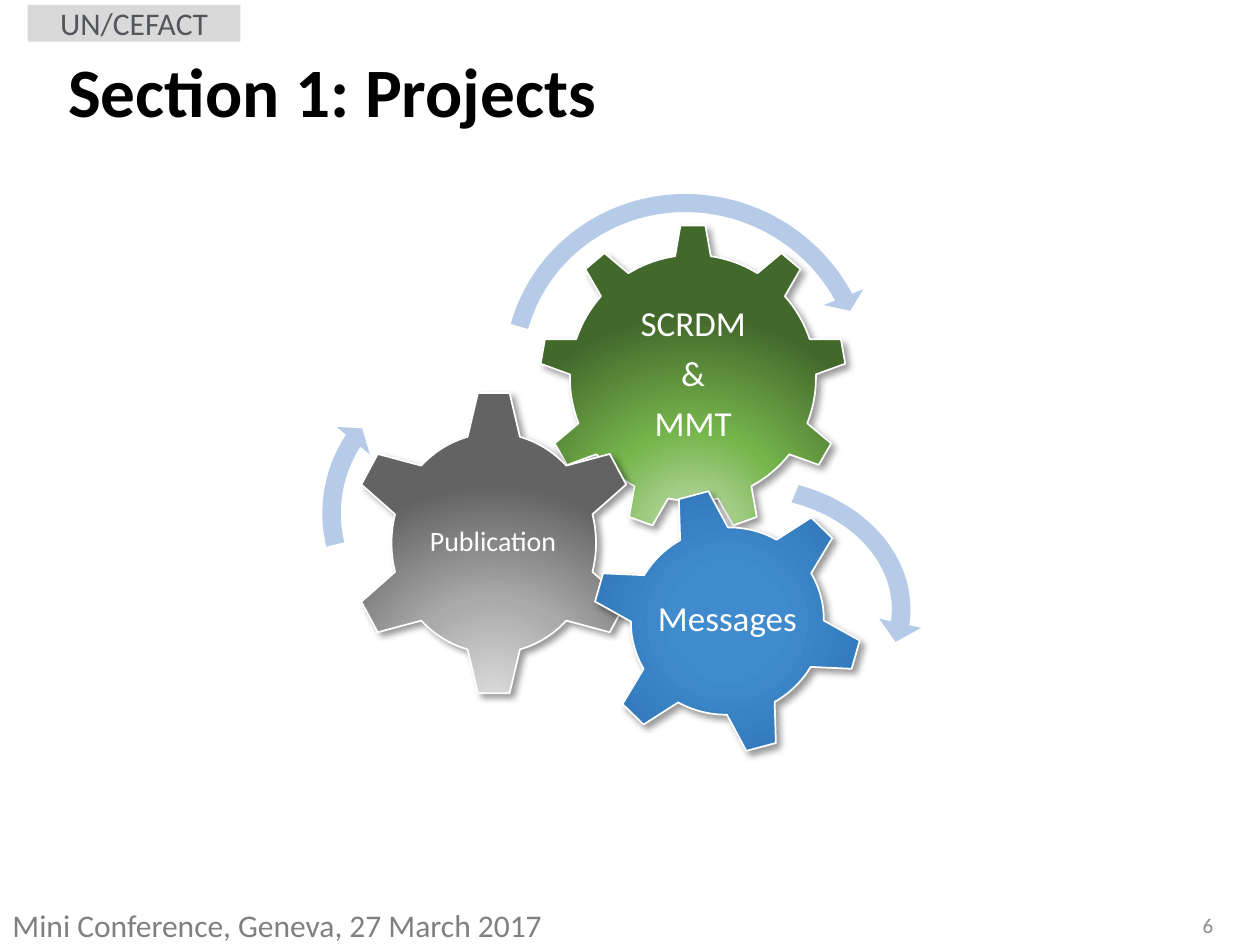
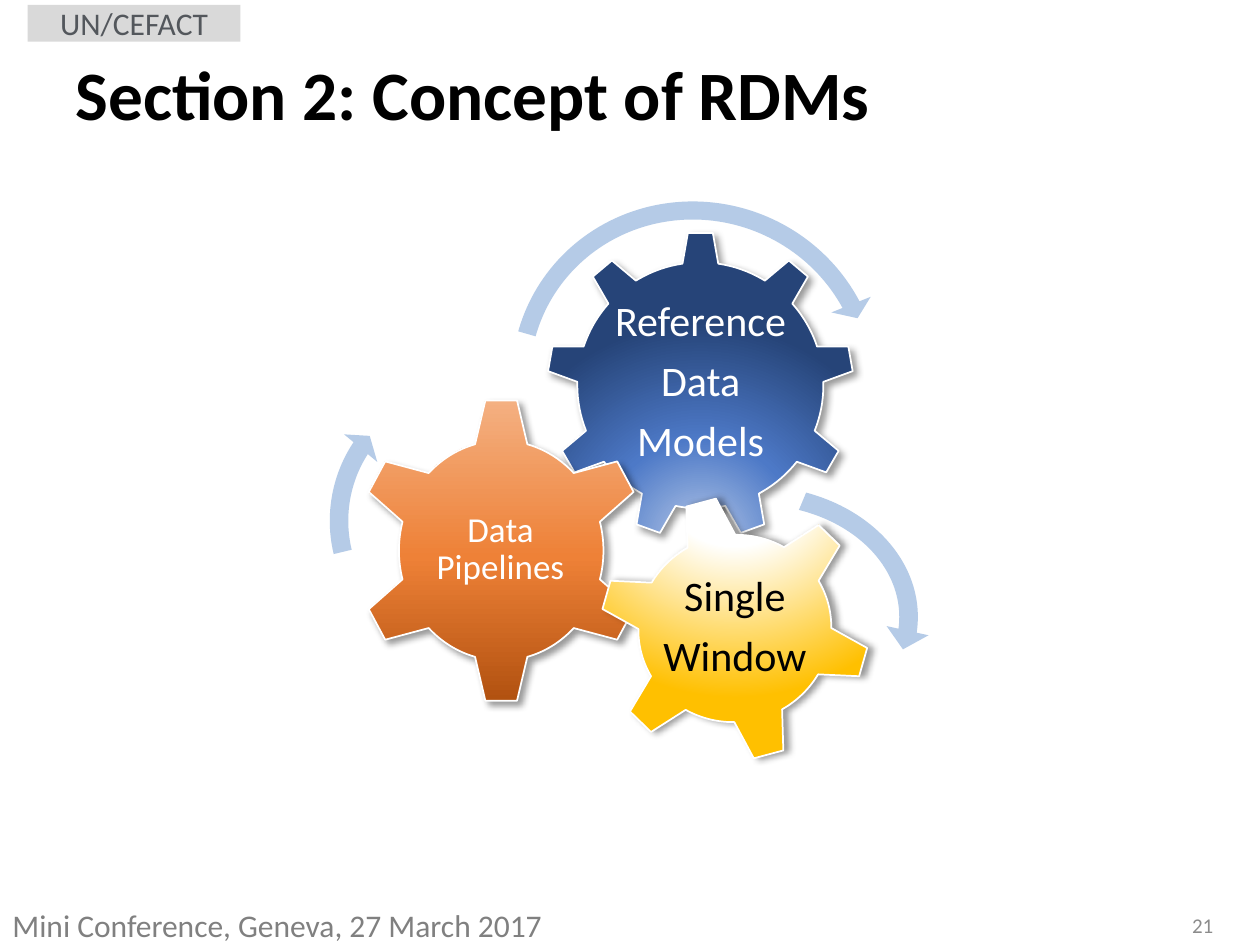
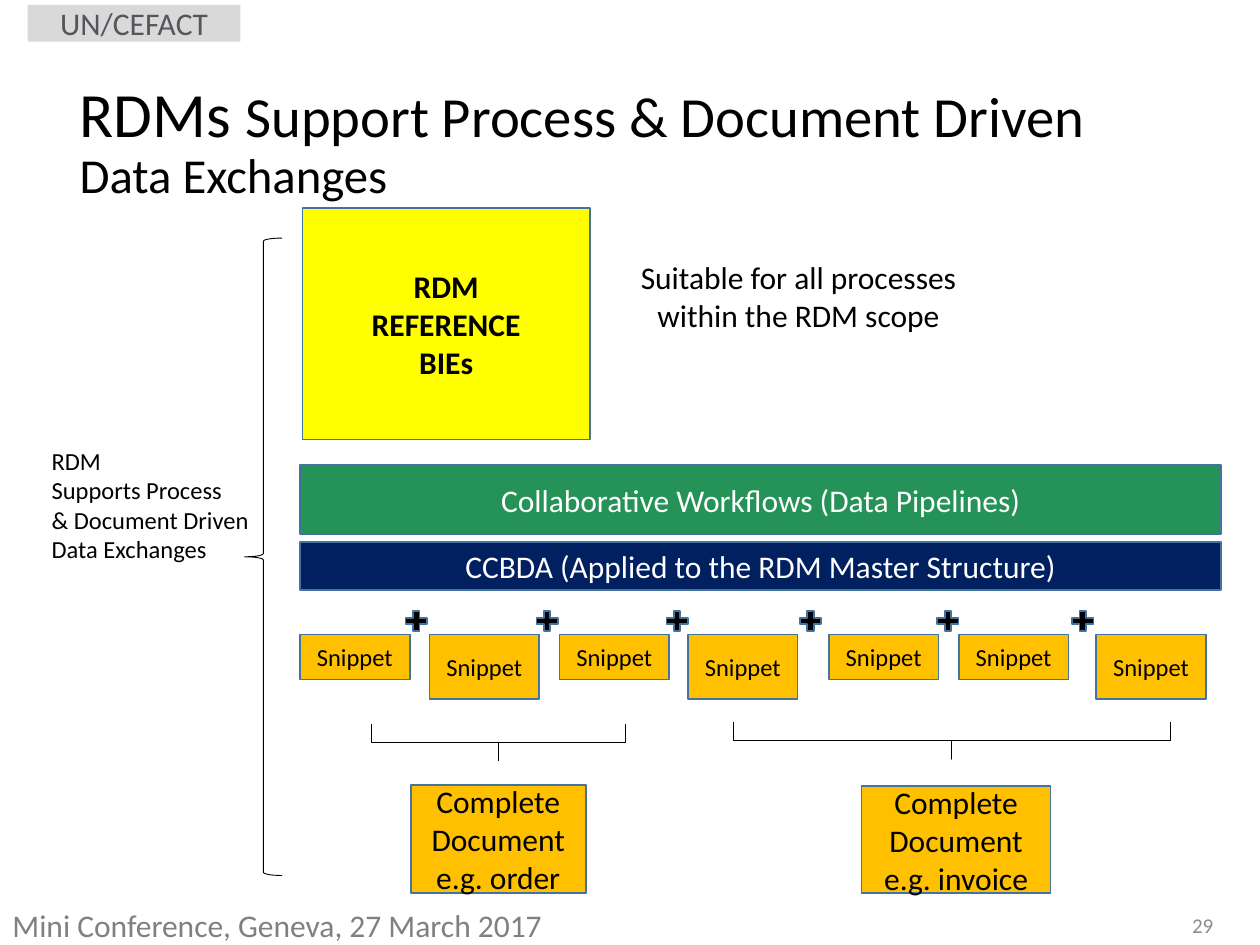
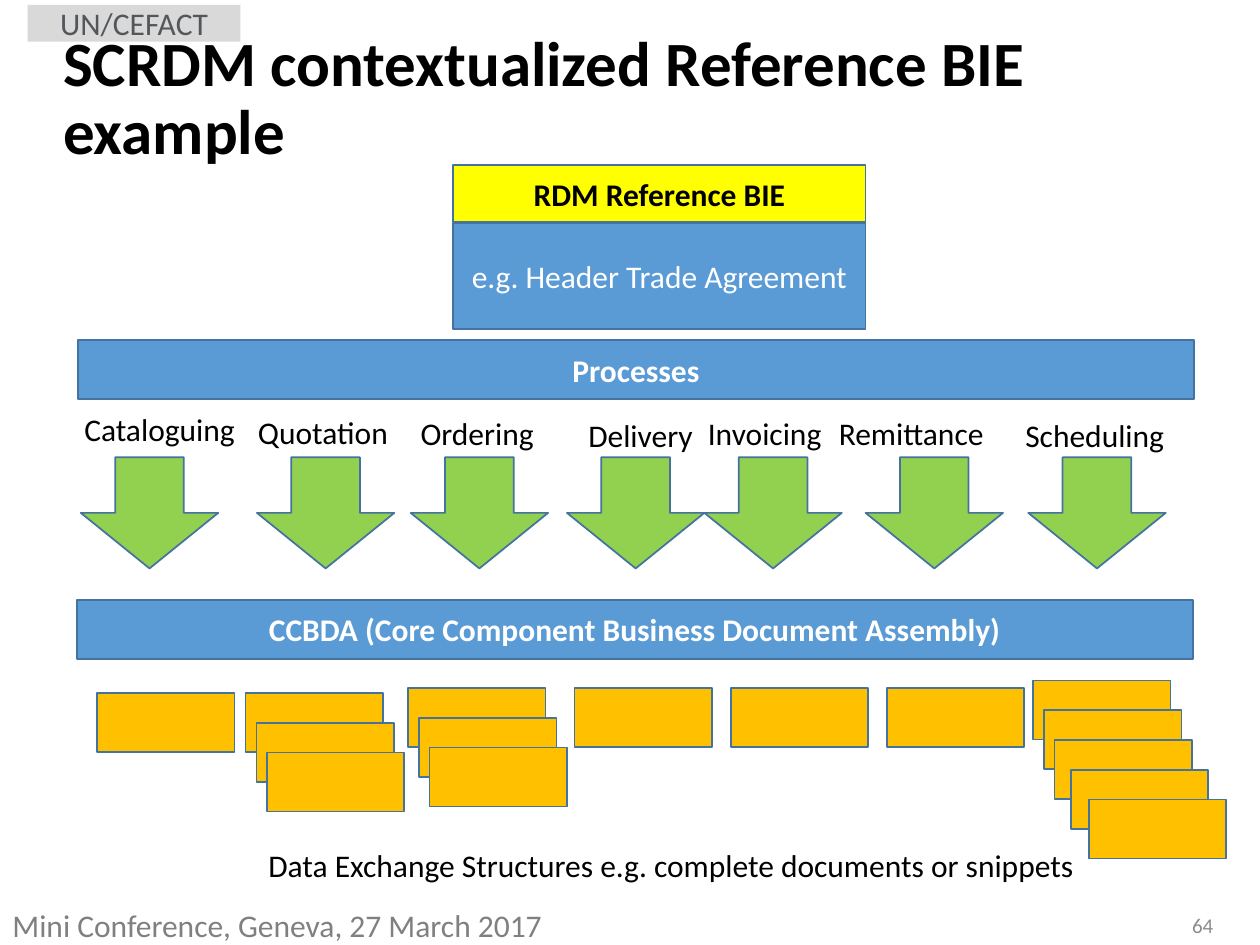
from pptx import Presentation
from pptx.dml.color import RGBColor
from pptx.enum.shapes import MSO_SHAPE
from pptx.enum.text import MSO_ANCHOR, MSO_AUTO_SIZE, PP_ALIGN
from pptx.oxml import parse_xml
from pptx.oxml.ns import nsdecls, qn
from pptx.util import Cm, Pt

# Shared style
FONT = "Calibri"
BLACK = RGBColor(0x00, 0x00, 0x00)
WHITE = RGBColor(0xFF, 0xFF, 0xFF)
BAND_GREY = RGBColor(0xD9, 0xD9, 0xD9)
BAND_TEXT_DARK = RGBColor(0x53, 0x57, 0x5C)
BAND_TEXT_LIGHT = RGBColor(0xC5, 0xC7, 0xCA)
FOOTER_GREY = RGBColor(0x80, 0x80, 0x80)
NUMBER_GREY = RGBColor(0x8C, 0x8C, 0x8C)
OUTLINE_BLUE = RGBColor(0x43, 0x73, 0x9E)
PROCESS_BLUE = RGBColor(0x5B, 0x9B, 0xD5)
NAVY = RGBColor(0x00, 0x20, 0x60)
WORKFLOW_GREEN = RGBColor(0x25, 0x93, 0x57)
ARROW_GREEN = RGBColor(0x92, 0xD0, 0x50)
YELLOW = RGBColor(0xFF, 0xFF, 0x00)
AMBER = RGBColor(0xFF, 0xC0, 0x00)
ROTATION_BLUE = RGBColor(0xB5, 0xCB, 0xE7)

RECTANGLE = MSO_SHAPE.RECTANGLE
GEAR_6, GEAR_9 = MSO_SHAPE.GEAR_6, MSO_SHAPE.GEAR_9
TURN_RIGHT, TURN_LEFT = MSO_SHAPE.CIRCULAR_ARROW, MSO_SHAPE.LEFT_CIRCULAR_ARROW
LEFT_BRACE, RIGHT_BRACE = MSO_SHAPE.LEFT_BRACE, MSO_SHAPE.RIGHT_BRACE
PLUS, DOWN_ARROW = MSO_SHAPE.MATH_PLUS, MSO_SHAPE.DOWN_ARROW
LEFT, CENTER, RIGHT = PP_ALIGN.LEFT, PP_ALIGN.CENTER, PP_ALIGN.RIGHT
TOP, MIDDLE = MSO_ANCHOR.TOP, MSO_ANCHOR.MIDDLE
NO_FIT, GROW = MSO_AUTO_SIZE.NONE, MSO_AUTO_SIZE.SHAPE_TO_FIT_TEXT

# Gear train: gear kind, gear box, rotation, label box (cm)
GEAR_PLACES = (
    (GEAR_9, (10.87, 4.52, 6.2, 6.2), 0, (12.12, 5.97, 3.71, 3.2)),
    (GEAR_6, (7.01, 7.85, 5.89, 6.2), 0, (8.48, 9.37, 2.92, 3.12)),
    (GEAR_6, (11.91, 9.83, 5.51, 5.38), 345, (13.13, 11, 3.07, 3.02)),
)
# Rotation arrows: kind, box (cm), rotation, adjustments
TURN_PLACES = (
    (TURN_RIGHT, (10.01, 3.58, 7.75, 7.95), 291.5,
     (0.047, 2.99, 25.131, 158.679, 0.055)),
    (TURN_LEFT, (11.51, 9.4, 7.09, 5.77), 0,
     (0.065, 4.3, 104.891, 148.378, 0.075)),
    (TURN_RIGHT, (6.25, 7.24, 6.22, 6.22), 351.3,
     (0.06, 3.941, 133.138, 105.082, 0.07)),
)
FROM_BELOW = (50, 130, 50, -30)
FROM_CENTER = (50, 50, 50, 50)
FROM_ABOVE = (50, -80, 50, 180)


def box_cm(box):
    return [Cm(length) for length in box]


def format_runs(paragraph, size, color, bold=False):
    for run in paragraph.runs:
        run.font.name = FONT
        run.font.size = Pt(size)
        run.font.bold = bold
        run.font.color.rgb = color


def write(frame, text, size, color, bold=False, align=CENTER, anchor=MIDDLE,
          spacing=None, after=None):
    frame.text = text
    frame.vertical_anchor = anchor
    for paragraph in frame.paragraphs:
        paragraph.alignment = align
        paragraph.line_spacing = spacing
        if after:
            paragraph.space_after = Pt(after)
        format_runs(paragraph, size, color, bold)


def add_figure(slide, kind, box, fill=None, outline=OUTLINE_BLUE, weight=1):
    figure = slide.shapes.add_shape(kind, *box_cm(box))
    figure.shadow.inherit = False
    if fill is None:
        figure.fill.background()
    else:
        figure.fill.solid()
        figure.fill.fore_color.rgb = fill
    if outline is None:
        figure.line.fill.background()
    else:
        figure.line.color.rgb = outline
        figure.line.width = Pt(weight)
    return figure


def add_block(slide, box, fill, text, color, size=18, bold=False):
    block = add_figure(slide, RECTANGLE, box, fill)
    block.text_frame.word_wrap = True
    write(block.text_frame, text, size, color, bold)


def add_label(slide, box, text, size=18, color=BLACK, align=LEFT, anchor=TOP,
              wrap=True, fit=NO_FIT, **style):
    frame = slide.shapes.add_textbox(*box_cm(box)).text_frame
    frame.word_wrap = wrap
    frame.auto_size = fit
    write(frame, text, size, color, align=align, anchor=anchor, **style)
    return frame


def place_title(slide, box):
    title = slide.shapes.title
    title.left, title.top, title.width, title.height = box_cm(box)
    title.text_frame.auto_size = NO_FIT
    title.text_frame.word_wrap = True
    return title.text_frame


def add_title(slide, box, text, size, spacing=0.9):
    write(place_title(slide, box), text, size, BLACK, True, LEFT, spacing=spacing)


def new_slide(prs, number):
    """Title-only slide with the shared footer and its slide number."""
    slide = prs.slides.add_slide(prs.slide_layouts[5])
    add_label(slide, (0, 18.14, 14.43, 1.02),
              "Mini Conference, Geneva, 27 March 2017", color=FOOTER_GREY)
    add_label(slide, (17.09, 18.14, 7.62, 1.02), number, 12, NUMBER_GREY,
              RIGHT, MIDDLE)
    return slide


def add_layout_band(slide):
    """Draw the organisation band and move it to the shared layout."""
    band = add_figure(slide, RECTANGLE, (0.56, 0.1, 4.29, 0.74), BAND_GREY, None)
    write(band.text_frame, "UN/CEFACT", 18, BAND_TEXT_DARK)
    text_fill = band.text_frame.paragraphs[0].runs[0].font.fill
    text_fill.gradient()
    text_fill.gradient_angle = 270
    ends = ((0.21, BAND_TEXT_DARK), (0.88, BAND_TEXT_LIGHT))
    for stop, (position, color) in zip(text_fill.gradient_stops, ends):
        stop.position = position
        stop.color.rgb = color
    band.element.xpath("./p:nvSpPr/p:cNvPr")[0].set("id", "99")
    slide.slide_layout.shapes.element.append(band.element)


def shade(gear, stops, focus):
    """Gradient towards a focus rectangle, or linear upwards without one."""
    stop_xml = "".join(
        f'<a:gs pos="{position * 1000}"><a:srgbClr val="{color}"/></a:gs>'
        for position, color in stops)
    if focus:
        sides = " ".join(f'{side}="{value * 1000}"'
                         for side, value in zip("ltrb", focus))
        direction = f'<a:path path="circle"><a:fillToRect {sides}/></a:path>'
    else:
        direction = '<a:lin ang="16200000" scaled="0"/>'
    properties = gear.element.spPr
    properties.replace(
        properties.find(qn("a:solidFill")),
        parse_xml(f'<a:gradFill {nsdecls("a")} rotWithShape="1">'
                  f'<a:gsLst>{stop_xml}</a:gsLst>{direction}</a:gradFill>'))


def cast_shadow(gear, angle):
    gear.element.spPr.find(qn("a:effectLst")).append(parse_xml(
        f'<a:outerShdw {nsdecls("a")} blurRad="{Pt(4)}" dist="{Pt(3)}" '
        f'dir="{angle * 60000}" algn="ctr" rotWithShape="0">'
        '<a:srgbClr val="000000"><a:alpha val="40000"/></a:srgbClr>'
        '</a:outerShdw>'))


def add_gear_train(slide, shift, gears):
    """Three meshing gears; gears gives text, size, colour, stops, focus, shadow."""
    def shifted(box):
        return box[0] + shift, box[1] + shift, box[2], box[3]

    for place, content in zip(GEAR_PLACES, gears):
        kind, gear_box, rotation, label_box = place
        text, size, color, stops, focus, shadow_angle = content
        gear = add_figure(slide, kind, shifted(gear_box), WHITE, WHITE)
        gear.rotation = rotation
        shade(gear, stops, focus)
        cast_shadow(gear, shadow_angle)
        frame = add_label(slide, shifted(label_box), text, size, color, CENTER,
                          MIDDLE, spacing=0.9, after=0.35 * size)
        frame.margin_left = frame.margin_right = Cm(0.08)
        frame.margin_top = frame.margin_bottom = Cm(0.08)

    for kind, box, rotation, adjustments in TURN_PLACES:
        turn = add_figure(slide, kind, shifted(box), ROTATION_BLUE, None)
        turn.rotation = rotation
        for index, value in enumerate(adjustments):
            turn.adjustments[index] = value
        if kind == TURN_LEFT:
            turn.element.spPr.xfrm.set("flipH", "1")


def build_projects(slide):
    add_title(slide, (1.12, 1.02, 22.61, 1.78), "Section 1: Projects", 39.6)
    add_gear_train(slide, 0, (
        ("SCRDM\n&\nMMT", 20, WHITE,
         ((0, "C5E0B4"), (46, "76B54C"), (100, "43682B")), FROM_BELOW, 45),
        ("Publication", 16, WHITE,
         ((0, "DBDBDB"), (46, "AAAAAA"), (100, "636363")), FROM_BELOW, 45),
        ("Messages", 20, WHITE,
         ((0, "408BCE"), (23, "408BCE"), (69, "2E75B6"), (97, "2B6DA9")),
         FROM_CENTER, 45),
    ))


def build_concept(slide):
    add_title(slide, (1.27, 1.14, 22.61, 1.78), "Section 2: Concept of RDMs",
              39.6, 0.8)
    add_gear_train(slide, 0.15, (
        ("Reference\nData\nModels", 24, WHITE,
         ((0, "B4C7E7"), (46, "4D79C7"), (100, "264478")), FROM_BELOW, 45),
        ("Data Pipelines", 20, WHITE,
         ((0, "B0500F"), (48, "EE8137"), (100, "F4B183")), None, 45),
        ("Single\nWindow", 24, BLACK,
         ((0, "FFFFFF"), (35, "FFFFFF"), (100, "FFC000")), FROM_ABOVE, 0),
    ))


def add_brace(slide, kind, box, rotation=0):
    brace = add_figure(slide, kind, box, outline=BLACK, weight=0.5)
    brace.rotation = rotation
    if kind == RIGHT_BRACE:
        brace.adjustments[0] = 0


def build_exchanges(slide):
    # Title in decreasing sizes; the bottom inset lifts it
    frame = place_title(slide, (1.35, 2.51, 23.95, 1.83))
    write(frame, "RDMs ", 36, BLACK, align=LEFT, spacing=0.9)
    frame.margin_bottom = Cm(1.2)
    heading = frame.paragraphs[0]
    heading.add_run().text = "Support Process & Document Driven"
    heading.add_line_break()
    heading.add_run().text = "Data Exchanges"
    format_runs(heading, 36, BLACK)
    for run, size in zip(heading.runs, (36, 32.4, 27.9)):
        run.font.size = Pt(size)

    # Reference model and the layers below it
    add_block(slide, (6.1, 4.19, 5.79, 4.67), YELLOW, "RDM\nREFERENCE\nBIEs",
              BLACK, bold=True)
    add_block(slide, (6.05, 10.92, 18.57, 0.97), NAVY,
              "CCBDA (Applied to the RDM Master Structure)", WHITE)
    add_block(slide, (6.05, 9.37, 18.57, 1.4), WORKFLOW_GREEN,
              "Collaborative Workflows (Data Pipelines)", WHITE)

    # Snippets joined by plus signs
    low, tall = 0.91, 1.3
    snippets = ((6.05, low), (8.66, tall), (11.28, low), (13.87, tall),
                (16.71, low), (19.33, low), (22.1, tall))
    for left, height in snippets:
        add_block(slide, (left, 12.79, 2.21, height), AMBER, "Snippet", BLACK, 14)
    for left in (8.1, 10.74, 13.36, 16.05, 18.82, 21.54):
        add_figure(slide, PLUS, (left, 12.24, 0.58, 0.56), BLACK)

    # Snippets gathered into complete documents
    add_brace(slide, RIGHT_BRACE, (9.68, 12.4, 0.74, 5.13), 90)
    add_brace(slide, RIGHT_BRACE, (18.82, 10.54, 0.74, 8.79), 90)
    add_block(slide, (8.28, 15.82, 3.53, 2.18), AMBER,
              "Complete Document\ne.g. order", BLACK)
    add_block(slide, (17.37, 15.85, 3.81, 2.16), AMBER,
              "Complete Document\ne.g. invoice", BLACK)

    # Remarks
    add_brace(slide, LEFT_BRACE, (4.93, 4.8, 0.76, 12.85))
    add_label(slide, (9.75, 5.08, 12.7, 1.8),
              "Suitable for all processes\nwithin the RDM scope",
              align=CENTER, fit=GROW)
    add_label(slide, (0.79, 8.86, 4.52, 2.64),
              "RDM\nSupports Process\n& Document Driven\nData Exchanges", 14,
              wrap=False, fit=GROW)


def build_example(slide):
    add_title(slide, (1.02, 1.02, 23.67, 1.98),
              "SCRDM contextualized Reference BIE example", 36)
    add_block(slide, (9.14, 4.5, 8.31, 2.13), PROCESS_BLUE,
              "e.g. Header Trade Agreement", WHITE)
    add_block(slide, (9.14, 3.33, 8.31, 1.14), YELLOW, "RDM Reference BIE",
              BLACK, bold=True)
    add_block(slide, (1.57, 6.86, 22.5, 1.19), PROCESS_BLUE, "Processes",
              WHITE, bold=True)

    # Processes: name, label left, top and width, arrow left
    processes = (
        ("Cataloguing", 1.45, 8.15, 3.58, 1.63),
        ("Quotation", 4.95, 8.2, 3.18, 5.18),
        ("Ordering", 8.23, 8.23, 2.82, 8.28),
        ("Delivery", 11.61, 8.26, 2.64, 11.43),
        ("Invoicing", 14.02, 8.23, 2.82, 14.2),
        ("Remittance", 16.66, 8.23, 3.48, 17.45),
        ("Scheduling", 20.42, 8.26, 3.35, 20.73),
    )
    for name, left, top, width, arrow_left in processes:
        add_figure(slide, DOWN_ARROW, (arrow_left, 9.22, 2.77, 2.24), ARROW_GREEN)
        add_label(slide, (left, top, width, 1.02), name, wrap=False, fit=GROW)

    add_block(slide, (1.55, 12.09, 22.5, 1.19), PROCESS_BLUE,
              "CCBDA (Core Component Business Document Assembly)", WHITE, bold=True)

    # Stacks of exchange structures: left, top, count
    stacks = ((1.96, 13.97, 1), (4.95, 13.97, 3), (8.23, 13.87, 3),
              (11.58, 13.87, 1), (14.73, 13.87, 1), (17.88, 13.87, 1),
              (20.83, 13.72, 5))
    card_offsets = (0, 0.22, 0.43, 0.76, 1.12)
    for left, top, count in stacks:
        for card, offset in enumerate(card_offsets[:count]):
            add_figure(slide, RECTANGLE,
                       (left + offset, top + 0.6 * card, 2.77, 1.19), AMBER)
    add_label(slide, (5.16, 16.94, 16.94, 1.02),
              "Data Exchange Structures e.g. complete documents or snippets",
              wrap=False, fit=GROW)


def main():
    prs = Presentation()
    prs.slide_width, prs.slide_height = Cm(25.4), Cm(19.05)
    pages = (("6", build_projects), ("21", build_concept),
             ("29", build_exchanges), ("64", build_example))
    for number, build in pages:
        build(new_slide(prs, number))
    add_layout_band(prs.slides[0])
    prs.save("out.pptx")


if __name__ == "__main__":
    main()
